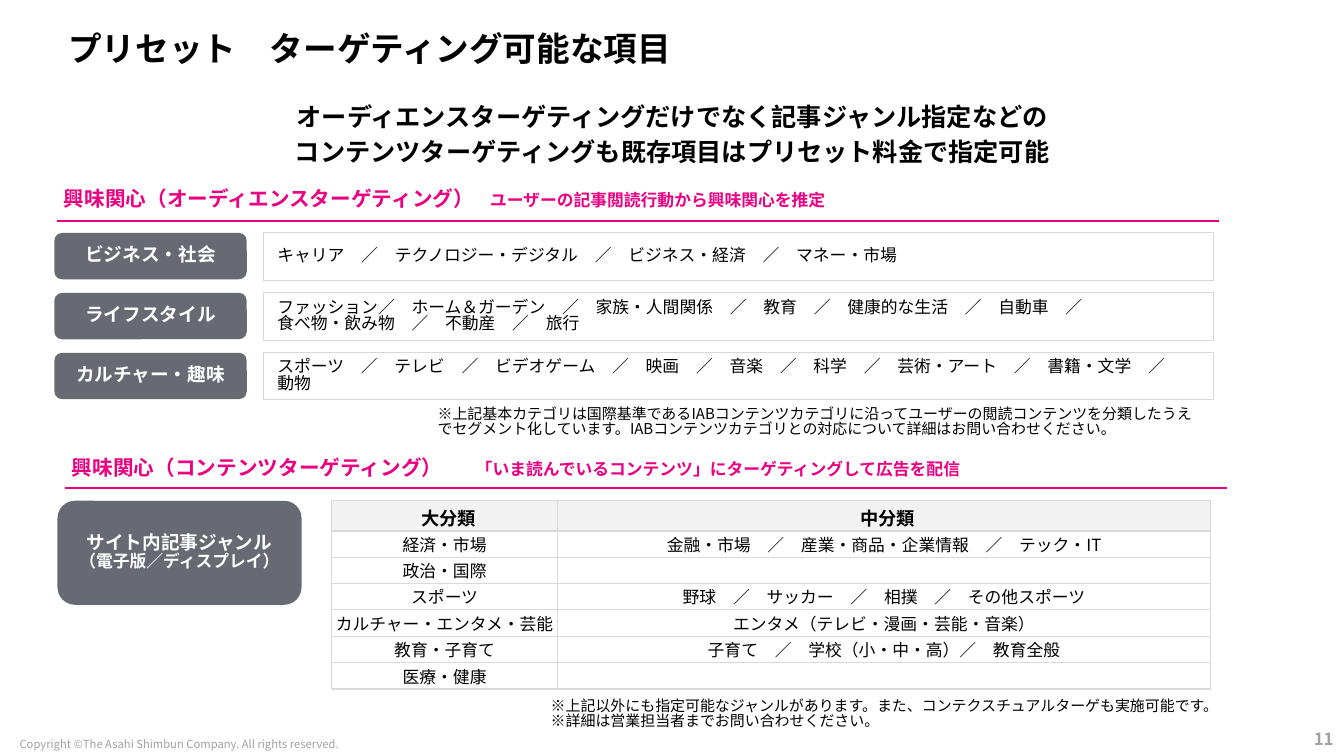
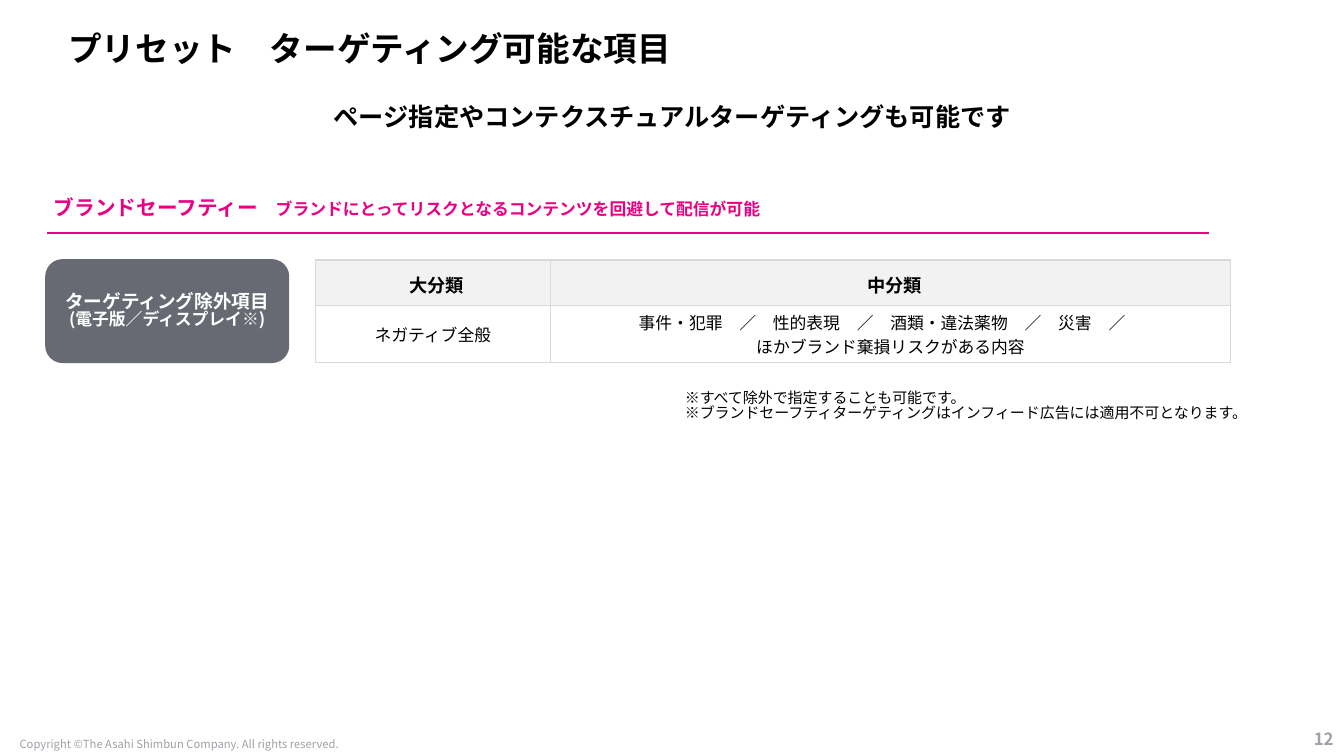
from dataclasses import dataclass, field
from lxml.etree import SubElement
from pptx import Presentation
from pptx.dml.color import RGBColor
from pptx.enum.shapes import MSO_CONNECTOR, MSO_SHAPE
from pptx.enum.text import MSO_ANCHOR, MSO_AUTO_SIZE, PP_ALIGN
from pptx.oxml import parse_xml
from pptx.oxml.ns import nsdecls, qn
from pptx.util import Cm, Pt


@dataclass(frozen=True)
class Theme:
    font: str = "Noto Sans CJK JP"
    accent: str = "EB0083"
    badge: str = "676A73"
    paper: str = "FFFFFF"
    outline: str = "D8D9DC"
    grid: str = "D9D9D9"
    header: str = "F2F2F2"
    tight: float = 0.83
    styles: dict = field(default_factory=lambda: {
        "title": (24, True, "000000"),
        "lead": (18, True, "000000"),
        "heading": (14.7, True, "EB0083"),
        "subheading": (12, True, "EB0083"),
        "badge": (13.3, True, "FFFFFF"),
        "badge_detail": (12, True, "FFFFFF"),
        "item": (12, False, "000000"),
        "note": (10.7, False, "000000"),
        "column": (13, True, "000000"),
        "copyright": (8, False, "9FA1A8"),
        "page": (12, True, "9FA1A8"),
    })


theme = Theme()


def write(frame, lines, align=PP_ALIGN.LEFT, spacing=1.0, gap=0):
    for index, line in enumerate(lines):
        paragraph = frame.paragraphs[0] if index == 0 else frame.add_paragraph()
        layout = {"alignment": align, "line_spacing": spacing, "space_before": Pt(gap if index else 0)}
        for key, value in layout.items():
            setattr(paragraph, key, value)
        for text, style in line:
            size, bold, color = theme.styles[style]
            if not text:
                SubElement(paragraph._p, qn("a:endParaRPr"), sz=str(size * 100))
                continue
            run = paragraph.add_run()
            run.text = text
            for key, value in {"size": Pt(size), "bold": bold, "name": theme.font}.items():
                setattr(run.font, key, value)
            run.font.color.rgb = RGBColor.from_string(color)
            SubElement(run._r.rPr, qn("a:ea"), typeface=theme.font)


def fill_box(shape, place, lines, inset=0.34, anchor=MSO_ANCHOR.TOP, **paragraph_format):
    for key, value in zip(("left", "top", "width", "height"), place):
        setattr(shape, key, Cm(value))
    frame_format = {"word_wrap": True, "auto_size": MSO_AUTO_SIZE.NONE, "vertical_anchor": anchor}
    for side in ("left", "right", "top", "bottom"):
        frame_format[f"margin_{side}"] = Cm(inset)
    for key, value in frame_format.items():
        setattr(shape.text_frame, key, value)
    write(shape.text_frame, lines, **paragraph_format)


pages = [
    {
        "number": "11",
        "lead": ["オーディエンスターゲティングだけでなく記事ジャンル指定などの",
                 "コンテンツターゲティングも既存項目はプリセット料金で指定可能"],
        "sections": [
            ("興味関心（オーディエンスターゲティング）", "ユーザーの記事閲読行動から興味関心を推定",
             10.74, 1.27, 4.45, 5.56),
            ("興味関心（コンテンツターゲティング）", "「いま読んでいるコンテンツ」にターゲティングして広告を配信",
             10.18, 1.47, 11.23, 12.29),
        ],
        "interests": [
            ("ビジネス・社会", ["キャリア　／　テクノロジー・デジタル　／　ビジネス・経済　／　マネー・市場"]),
            ("ライフスタイル",
             ["ファッション／　ホーム＆ガーデン　／　家族・人間関係　／　教育　／　健康的な生活　／　自動車　／",
              "食べ物・飲み物　／　不動産　／　旅行"]),
            ("カルチャー・趣味",
             ["スポーツ　／　テレビ　／　ビデオゲーム　／　映画　／　音楽　／　科学　／　芸術・アート　／　書籍・文学　／",
              "動物"]),
        ],
        "scope": ("サイト内記事ジャンル", "（電子版／ディスプレイ）", 1.45, 12.62),
        "notes": [
            (10.69, 9.93, 20.02,
             ["※上記基本カテゴリは国際基準であるIABコンテンツカテゴリに沿ってユーザーの閲読コンテンツを分類したうえ"
              "でセグメント化しています。IABコンテンツカテゴリとの対応について詳細はお問い合わせください。"]),
            (13.54, 17.3, 17.78,
             ["※上記以外にも指定可能なジャンルがあります。また、コンテクスチュアルターゲも実施可能です。",
              "※詳細は営業担当者までお問い合わせください。"]),
        ],
        "genre_place": (8.36, 12.62),
        "genre_columns": (5.69, 16.46),
        "genre_rows": (0.69, 0.66, 0.66, 0.66, 0.68, 0.66, 0.66),
        "genres": [
            ("経済・市場", ["金融・市場　／　産業・商品・企業情報　／　テック・IT"]),
            ("政治・国際", [""]),
            ("スポーツ", ["野球　／　サッカー　／　相撲　／　その他スポーツ"]),
            ("カルチャー・エンタメ・芸能", ["エンタメ（テレビ・漫画・芸能・音楽）"]),
            ("教育・子育て", ["子育て　／　学校（小・中・高）／　教育全般"]),
            ("医療・健康", [""]),
        ],
    },
    {
        "number": "12",
        "lead": ["ページ指定やコンテクスチュアルターゲティングも可能です"],
        "sections": [
            ("ブランドセーフティー", "ブランドにとってリスクとなるコンテンツを回避して配信が可能",
             5.59, 1.02, 4.67, 5.87),
        ],
        "interests": [],
        "scope": ("ターゲティング除外項目", "(電子版／ディスプレイ※)", 1.14, 6.53),
        "notes": [
            (16.92, 9.53, 15.29,
             ["※すべて除外で指定することも可能です。",
              "※ブランドセーフティターゲティングはインフィード広告には適用不可となります。"]),
        ],
        "genre_place": (7.95, 6.55),
        "genre_columns": (5.92, 17.15),
        "genre_rows": (1.14, 1.45),
        "genres": [
            ("ネガティブ全般",
             ["事件・犯罪　／　性的表現　／　酒類・違法薬物　／　災害　／　",
              "ほかブランド棄損リスクがある内容"]),
        ],
    },
]

deck = Presentation()
deck.slide_width, deck.slide_height = Cm(33.87), Cm(19.05)

for page in pages:
    slide = deck.slides.add_slide(deck.slide_layouts[1])
    shapes = slide.shapes
    title, lead = slide.placeholders
    fill_box(title, (1.47, 0.71, 25.3, 1.19), [[("プリセット　ターゲティング可能な項目", "title")]],
             inset=0.25, anchor=MSO_ANCHOR.MIDDLE, spacing=0.8)
    fill_box(lead, (0.94, 2.62, 32, 2.31), [[(text, "lead")] for text in page["lead"]],
             inset=0.13, align=PP_ALIGN.CENTER, spacing=0.7, gap=10)
    for paragraph in lead.text_frame.paragraphs:
        properties = paragraph._p.get_or_add_pPr()
        for key in ("marL", "indent"):
            properties.set(key, "0")
        SubElement(properties, qn("a:buNone"))

    fill_box(shapes.add_textbox(0, 0, 0, 0), (0.23, 18.54, 8.59, 0.43),
             [[("Copyright ©The Asahi Shimbun Company. All rights reserved.", "copyright")]],
             inset=0, anchor=MSO_ANCHOR.MIDDLE, align=PP_ALIGN.CENTER)
    fill_box(shapes.add_textbox(0, 0, 0, 0), (31.88, 18.21, 1.98, 0.84), [[(page["number"], "page")]],
             inset=0.25, anchor=MSO_ANCHOR.MIDDLE, align=PP_ALIGN.RIGHT)

    for heading, subheading, tab, left, top, rule_top in page["sections"]:
        section = shapes.add_textbox(0, 0, 0, 0)
        fill_box(section, (left, top, 24.4, 1.2),
                 [[(heading + "\t", "heading"), (subheading, "subheading")]], spacing=theme.tight)
        tabs = SubElement(section.text_frame.paragraphs[0]._p.get_or_add_pPr(), qn("a:tabLst"))
        SubElement(tabs, qn("a:tab"), pos=str(Cm(tab)), algn="l")
        rule = shapes.add_connector(MSO_CONNECTOR.STRAIGHT, Cm(left + 0.16), Cm(rule_top),
                                    Cm(left + 29.46), Cm(rule_top))
        rule.line.color.rgb = RGBColor.from_string(theme.accent)
        rule.line.width = Pt(1.5)
        SubElement(rule._element.spPr, qn("a:effectLst"))

    scope, media, scope_left, scope_top = page["scope"]
    panels = [(MSO_SHAPE.ROUNDED_RECTANGLE, (scope_left, scope_top, 6.15, 2.62),
               [[(scope, "badge")], [(media, "badge_detail")]])]
    for row, (interest, topics) in enumerate(page["interests"]):
        row_top = 5.87 + row * 1.51
        panels.append((MSO_SHAPE.ROUNDED_RECTANGLE, (1.37, row_top, 4.85, 1.17), [[(interest, "badge")]]))
        panels.append((MSO_SHAPE.RECTANGLE, (6.65, row_top, 23.93, 1.19), [[(text, "item")] for text in topics]))
    for outline, place, lines in panels:
        panel = shapes.add_shape(outline, 0, 0, 0, 0)
        is_badge = outline == MSO_SHAPE.ROUNDED_RECTANGLE
        panel.shadow.inherit = False
        panel.fill.solid()
        panel.fill.fore_color.rgb = RGBColor.from_string(theme.badge if is_badge else theme.paper)
        if is_badge:
            panel.line.fill.background()
        else:
            panel.line.color.rgb = RGBColor.from_string(theme.outline)
            panel.line.width = Pt(0.75)
        fill_box(panel, place, lines, anchor=MSO_ANCHOR.MIDDLE, spacing=theme.tight,
                 align=PP_ALIGN.CENTER if is_badge else PP_ALIGN.LEFT)

    for left, top, width, remarks in page["notes"]:
        fill_box(shapes.add_textbox(0, 0, 0, 0), (left, top, width, 1.6),
                 [[(text, "note")] for text in remarks], spacing=theme.tight)

    columns, rows = page["genre_columns"], page["genre_rows"]
    left, top = page["genre_place"]
    genre_table = shapes.add_table(len(rows), len(columns), Cm(left), Cm(top),
                                   Cm(sum(columns)), Cm(sum(rows))).table
    genre_table.first_row = genre_table.horz_banding = False
    for column, width in zip(genre_table.columns, columns):
        column.width = Cm(width)
    for row, height in zip(genre_table.rows, rows):
        row.height = Cm(height)
    for row, (major, minors) in enumerate([("大分類", ["中分類"])] + page["genres"]):
        is_header = row == 0
        for column, texts in enumerate(([major], minors)):
            cell = genre_table.cell(row, column)
            cell_format = {
                "vertical_anchor": MSO_ANCHOR.MIDDLE,
                "margin_left": Cm(0.27 if is_header else 0.08),
                "margin_right": Cm(0.08),
                "margin_top": Cm(0.1 if is_header else 0),
                "margin_bottom": Cm(0),
            }
            for key, value in cell_format.items():
                setattr(cell, key, value)
            cell.fill.solid()
            cell.fill.fore_color.rgb = RGBColor.from_string(theme.header if is_header else theme.paper)
            for position, side in enumerate("LRTB"):
                cell._tc.get_or_add_tcPr().insert(position, parse_xml(
                    f'<a:ln{side} {nsdecls("a")} w="{Pt(1)}"><a:solidFill>'
                    f'<a:srgbClr val="{theme.grid}"/></a:solidFill></a:ln{side}>'))
            write(cell.text_frame, [[(text, "column" if is_header else "item")] for text in texts],
                  align=PP_ALIGN.CENTER)

deck.save("out.pptx")
